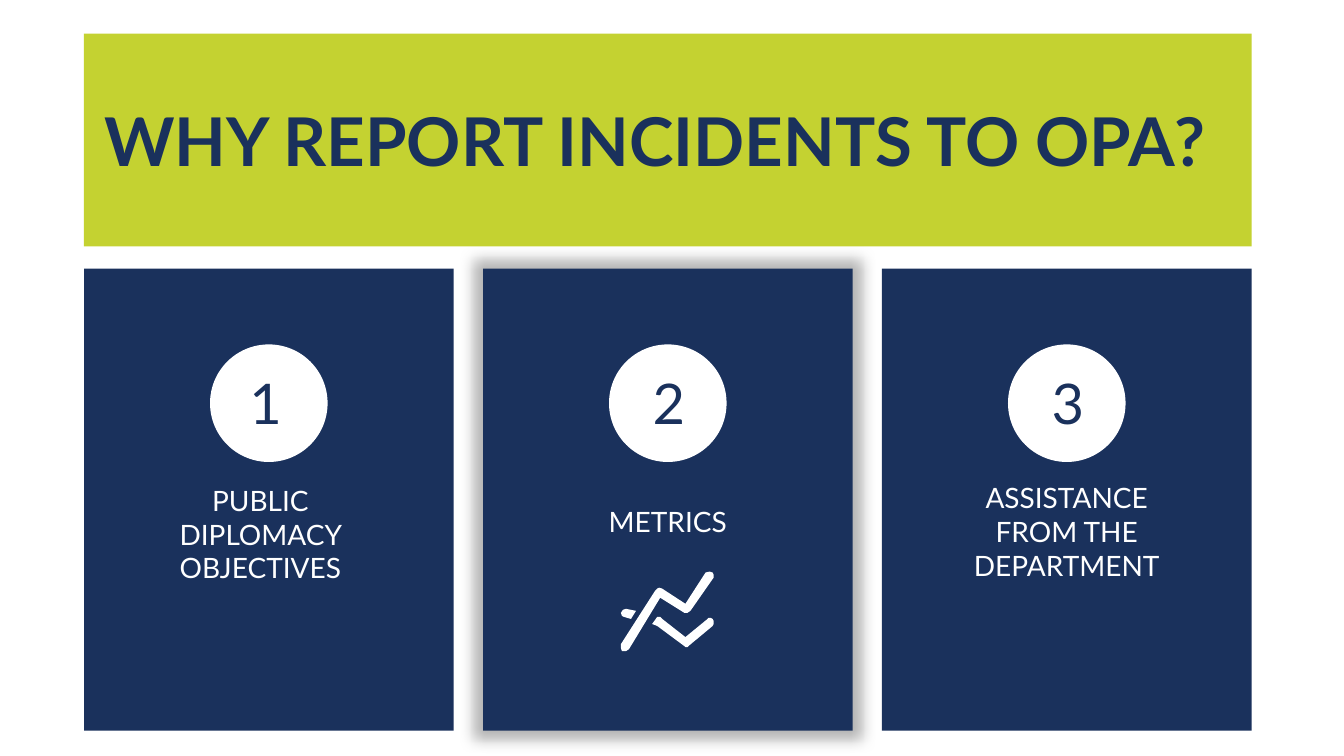
"""Build the slide on three reasons to report incidents to OPA."""
from pptx import Presentation, oxml
from pptx.dml import color
from pptx.enum import shapes, text
from pptx.oxml import ns
from pptx.util import Pt

COLORS = {"lime": "C4D231", "navy": "1A315C", "white": "FFFFFF"}
CARD_LEFT, CARD_TOP, CARD_PITCH = 60, 192, 285
CARDS = [
    ("1", 171, "PUBLIC DIPLOMACY OBJECTIVES", 96, 342, 80),
    ("2", 459, "METRICS", 387, 357, 32),
    ("3", 744, "ASSISTANCE FROM THE DEPARTMENT", 672, 340, 80),
]
ICON = [
    [(619, 612), (626, 614), (631, 606), (621, 604), (618, 605), (616, 608),
     (617, 611)],
    [(702, 614), (680, 632), (657, 614), (655, 612), (652, 612), (647, 619),
     (652, 621), (679, 641), (680, 642), (682, 642), (683, 641), (707, 621),
     (708, 619), (708, 616), (707, 614), (705, 613), (703, 613)],
    [(655, 593), (679, 608), (682, 608), (685, 606), (708, 573), (708, 570),
     (707, 568), (704, 567), (700, 568), (680, 599), (657, 584), (654, 583),
     (652, 584), (650, 586), (616, 639), (616, 643), (617, 646), (621, 646),
     (624, 644)],
]


def paint(sp, name):
    sp.shadow.inherit = False
    sp.fill.solid()
    sp.fill.fore_color.rgb = color.RGBColor.from_string(COLORS[name])
    sp.line.fill.background()


def write(sp, box, words, size, name, align, bold=False):
    for key, value in zip(("left", "top", "width", "height"), box):
        setattr(sp, key, Pt(value))
    tf = sp.text_frame
    tf.word_wrap = True
    p = tf.paragraphs[0]
    p.alignment = align
    r = p.add_run()
    r.text = words
    for key, value in {"name": "Lato", "size": Pt(size), "bold": bold}.items():
        setattr(r.font, key, value)
    r.font.color.rgb = color.RGBColor.from_string(COLORS[name])
    return tf


prs = Presentation()
prs.slide_width, prs.slide_height = Pt(960), Pt(540)
s = prs.slides.add_slide(prs.slide_layouts[5])
left, center = text.PP_ALIGN.LEFT, text.PP_ALIGN.CENTER

banner = s.shapes.add_shape(shapes.MSO_SHAPE.RECTANGLE, Pt(60), Pt(24), Pt(834), Pt(152))
paint(banner, "lime")
title = s.shapes.title
title.element.addprevious(banner.element)
tf = write(title, (36, 66, 864, 67), "WHY REPORT INCIDENTS TO OPA?", 48, "navy", center, True)
tf.auto_size = text.MSO_AUTO_SIZE.NONE
tf.vertical_anchor = text.MSO_ANCHOR.MIDDLE
for side in ("left", "top", "right", "bottom"):
    setattr(tf, f"margin_{side}", Pt(3.6))

for i, (number, number_left, label, label_left, label_top, label_height) in enumerate(CARDS):
    x = CARD_LEFT + i * CARD_PITCH
    card = s.shapes.add_shape(shapes.MSO_SHAPE.RECTANGLE, Pt(x), Pt(CARD_TOP), Pt(264), Pt(330))
    paint(card, "navy")
    if number == "2":
        effects = card.element.spPr.find(ns.qn("a:effectLst"))
        effects.append(oxml.parse_xml(
            f'<a:outerShdw {ns.nsdecls("a")} blurRad="{Pt(10)}" sx="105000" sy="104000" '
            'algn="ctr" rotWithShape="0"><a:srgbClr val="000000"><a:alpha val="30000"/>'
            '</a:srgbClr></a:outerShdw>'))
    circle = s.shapes.add_shape(shapes.MSO_SHAPE.OVAL, Pt(x + 90), Pt(246), Pt(84), Pt(84))
    paint(circle, "white")
    for box, words, size, name, align in (
        ((number_left, 260, 60, 55.5), number, 40, "navy", left),
        ((label_left, label_top, 180, label_height), label, 20, "white", center),
    ):
        sp = s.shapes.add_textbox(0, 0, 0, 0)
        tf = write(sp, box, words, size, name, align)
        tf.auto_size = text.MSO_AUTO_SIZE.SHAPE_TO_FIT_TEXT

builder = s.shapes.build_freeform(*ICON[0][0], scale=Pt(0.72))
builder.add_line_segments(ICON[0][1:])
for outline in ICON[1:]:
    builder.move_to(*outline[0])
    builder.add_line_segments(outline[1:])
paint(builder.convert_to_shape(), "white")

prs.save("out.pptx")
